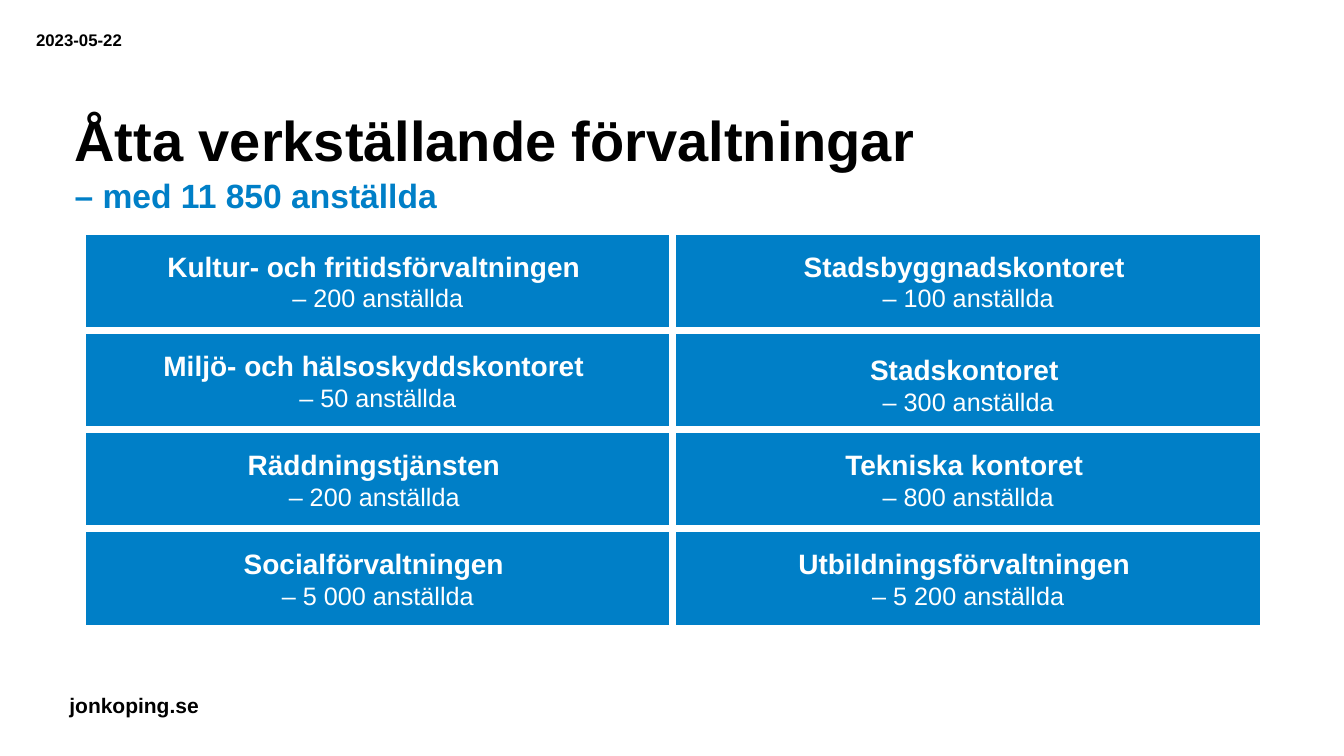
from pptx import Presentation
from pptx.dml.color import RGBColor
from pptx.enum.shapes import MSO_SHAPE
from pptx.enum.text import MSO_ANCHOR, MSO_AUTO_SIZE, PP_ALIGN
from pptx.util import Cm, Pt
from lxml import etree

RECT = MSO_SHAPE.RECTANGLE
TOP, MIDDLE, BOTTOM = MSO_ANCHOR.TOP, MSO_ANCHOR.MIDDLE, MSO_ANCHOR.BOTTOM
LEFT, CENTER = PP_ALIGN.LEFT, PP_ALIGN.CENTER
FIXED = MSO_AUTO_SIZE.NONE

TITLE = "Åtta verkställande förvaltningar"
TOTAL = "– med 11 850 anställda"
DATE = "2023-05-22"
SITE = "jonkoping.se"
OFFICES = [
    [("Kultur- och fritidsförvaltningen ", "– 200 anställda", 0),
     ("Stadsbyggnadskontoret ", "– 100 anställda", 0)],
    [("Miljö- och hälsoskyddskontoret ", "– 50 anställda", 0),
     ("Stadskontoret ", "– 300 anställda", 0.2)],
    [("Räddningstjänsten ", "– 200 anställda ", 0),
     ("Tekniska kontoret ", "– 800 anställda", 0)],
    [("Socialförvaltningen ", "– 5 000 anställda", 0),
     ("Utbildningsförvaltningen ", "– 5 200 anställda", 0)],
]
COLORS = {"blue": "007FC7", "black": "000000", "white": "FFFFFF"}
FONT = "Arial"
GRID_X, GRID_Y = 2.08, 5.83
CELL_W, CELL_H = 14.88, 2.5


def tint(name):
    return RGBColor.from_string(COLORS[name])


def style(para, size, color, bold=True, align=LEFT):
    para.alignment = align
    para.space_before = Pt(0)
    for run in para.runs:
        run.font.name = FONT
        run.font.size = Pt(size)
        run.font.bold = bold
        run.font.color.rgb = tint(color)


def setup(shape, anchor, top=0):
    frame = shape.text_frame
    frame.auto_size = FIXED
    frame.word_wrap = True
    frame.vertical_anchor = anchor
    frame.margin_left = frame.margin_right = frame.margin_bottom = Cm(0)
    frame.margin_top = Cm(top)
    return frame


def write(shape, box, text, size, color, anchor):
    shape.left, shape.top, shape.width, shape.height = map(Cm, box)
    frame = setup(shape, anchor)
    frame.text = text
    style(frame.paragraphs[0], size, color)
    return frame.paragraphs[0]


def label(slide, box, text, size):
    shape = slide.shapes.add_textbox(*map(Cm, box))
    write(shape, box, text, size, "black", TOP)


def tile(slide, row, col, name, staff, drop):
    box = GRID_X + col * CELL_W, GRID_Y + row * CELL_H, CELL_W, CELL_H
    shape = slide.shapes.add_shape(RECT, *map(Cm, box))
    shape.shadow.inherit = False
    shape.fill.solid()
    shape.fill.fore_color.rgb = tint("blue")
    shape.line.color.rgb = tint("white")
    shape.line.width = Pt(5)
    frame = setup(shape, MIDDLE, drop)
    frame.text = name + "\n" + staff
    head, count = frame.paragraphs
    style(head, 20, "white", align=CENTER)
    style(count, 18, "white", False, CENTER)


def main():
    deck = Presentation()
    deck.slide_width, deck.slide_height = Cm(33.87), Cm(19.05)
    slide = deck.slides.add_slide(deck.slide_layouts[1])

    head = write(slide.shapes.title, (1.88, 1.27, 30.07, 3.1),
                 TITLE, 40, "black", BOTTOM)
    head.line_spacing = 0.9
    total = write(slide.placeholders[1], (1.88, 4.62, 30.07, 0.81),
                  TOTAL, 24, "blue", BOTTOM)
    props = total._p.get_or_add_pPr()
    props.set("marL", "0")
    props.set("indent", "0")
    space = "http://schemas.openxmlformats.org/drawingml/2006/main"
    etree.SubElement(props, "{%s}buNone" % space)

    label(slide, (0.91, 0.76, 2.49, 0.51), DATE, 12)
    label(slide, (1.75, 17.45, 3.8, 0.64), SITE, 15)
    for row, pair in enumerate(OFFICES):
        for col, office in enumerate(pair):
            tile(slide, row, col, *office)
    deck.save("out.pptx")


if __name__ == "__main__":
    main()
